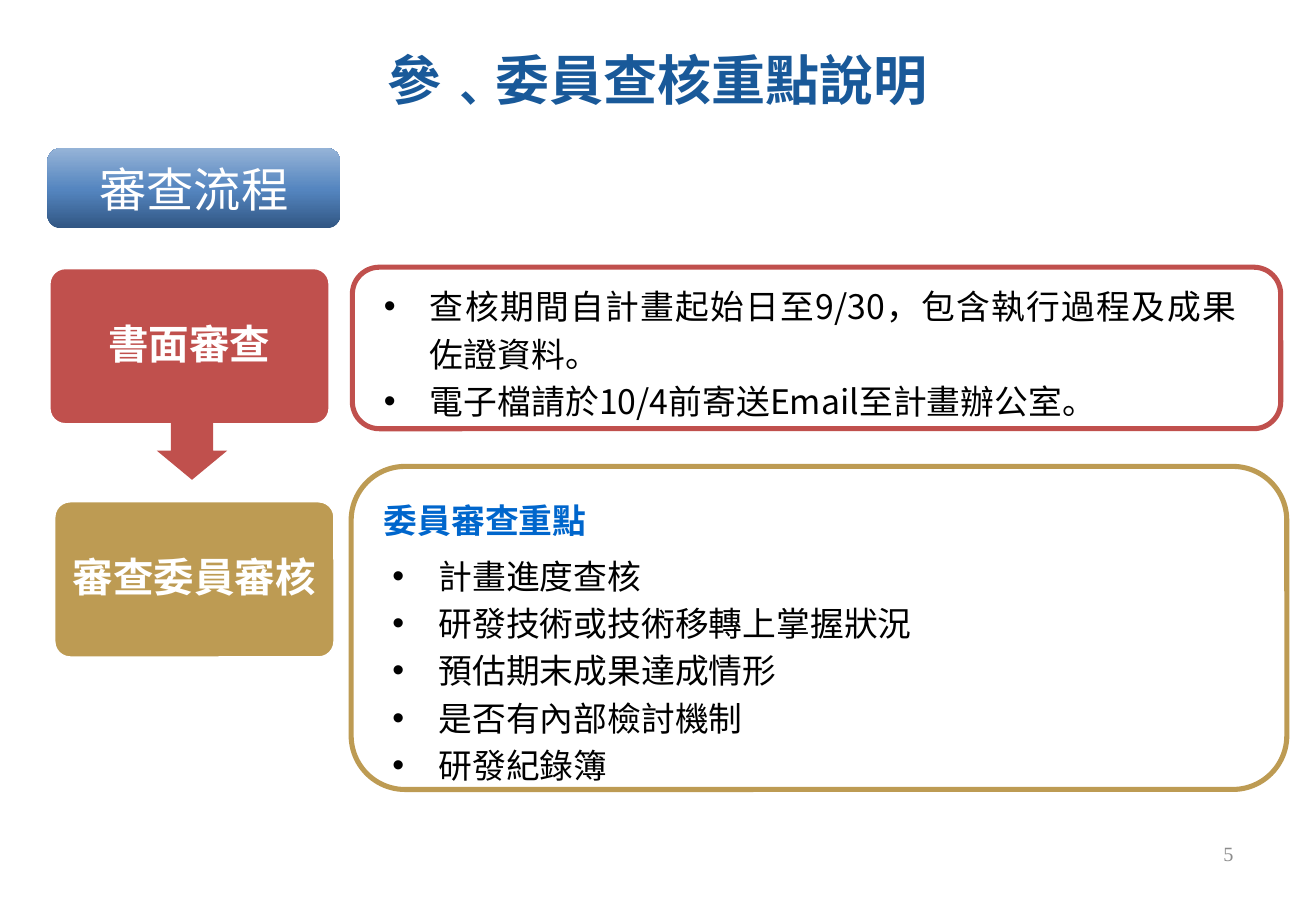
from copy import deepcopy
from pptx import Presentation
from pptx.dml.color import RGBColor
from pptx.enum.shapes import MSO_SHAPE as Shape
from pptx.enum.text import MSO_ANCHOR as Anchor, PP_ALIGN as Align
from pptx.oxml.ns import qn
from pptx.util import Pt

PX = 9144
THEME = {
    "title": "195999", "red": "C0504D", "gold": "BD9B53", "white": "FFFFFF",
    "text": "000000", "heading": "0066CC", "number": "8C8C8C",
    "gradient": [(0, "315683"), (0.48, "5485BF"), (1, "95B3D7")],
    "title_size": 32, "section_size": 28, "step_size": 24,
    "body_size": 20, "number_size": 12,
    "sans": "Arial", "cjk": "Noto Sans CJK SC", "serif": "Times New Roman",
}

deck = Presentation()
deck.slide_width, deck.slide_height = 1083 * PX, 750 * PX
page = deck.slides.add_slide(deck.slide_layouts[6])


def add_box(place, kind=None, fill=None, line=None, width=1, round_by=None):
    place = [length * PX for length in place]
    if kind is None:
        box = page.shapes.add_textbox(*place)
    else:
        box = page.shapes.add_shape(kind, *place)
        box.shadow.inherit = False
        if round_by is not None:
            box.adjustments[0] = round_by
        if fill:
            box.fill.solid()
            box.fill.fore_color.rgb = RGBColor.from_string(THEME[fill])
        else:
            box.fill.background()
        if line:
            box.line.color.rgb = RGBColor.from_string(THEME[line])
            box.line.width = Pt(width)
        else:
            box.line.fill.background()
    box.text_frame.word_wrap = True
    return box


def add_span(para, text, size, color, font, bold=False):
    span = para.add_run()
    span.text = text
    span.font.size = Pt(THEME[size])
    span.font.bold = bold
    span.font.color.rgb = RGBColor.from_string(THEME[color])
    span.font.name = THEME[font]
    east_asian = span.font._element.makeelement(qn("a:ea"), {"typeface": THEME[font]})
    span.font._element.append(east_asian)


title = add_box((49, 41, 984, 48)).text_frame
title.margin_left = title.margin_right = title.margin_top = title.margin_bottom = 0
title.vertical_anchor = Anchor.MIDDLE
para = title.paragraphs[0]
para.alignment = Align.CENTER
for text, font in [("參", "sans"), ("﹑", "cjk"), ("委員查核重點說明", "sans")]:
    add_span(para, text, "title_size", "title", font, True)

number = add_box((781, 683, 244, 40)).text_frame
number.vertical_anchor = Anchor.MIDDLE
para = number.paragraphs[0]
para.alignment = Align.RIGHT
add_span(para, "5", "number_size", "number", "serif")

section = add_box((39, 122, 241, 66), Shape.ROUNDED_RECTANGLE)
section.fill.gradient()
section.fill.gradient_angle = 90
stop_list = section._element.spPr.find(qn("a:gradFill")).find(qn("a:gsLst"))
stop_list.append(deepcopy(stop_list[0]))
for stop, (position, color) in zip(section.fill.gradient_stops, THEME["gradient"]):
    stop.position = position
    stop.color.rgb = RGBColor.from_string(color)
section.text_frame.vertical_anchor = Anchor.MIDDLE
para = section.text_frame.paragraphs[0]
para.alignment = Align.CENTER
add_span(para, "審查流程", "section_size", "white", "sans")

steps = [
    ("書面審查", (41, 221, 230, 128), "red", (290, 220, 764, 133)),
    ("審查委員審核", (45, 413, 230, 128), "gold", (289, 384, 770, 266)),
]
for name, card_place, color, panel_place in steps:
    card = add_box(card_place, Shape.ROUNDED_RECTANGLE, color, "white", round_by=0.1)
    card.text_frame.vertical_anchor = Anchor.MIDDLE
    para = card.text_frame.paragraphs[0]
    para.alignment = Align.CENTER
    para.line_spacing = 0.9
    add_span(para, name, "step_size", "white", "sans", True)
    add_box(panel_place, Shape.ROUNDED_RECTANGLE, line=color, width=3)

arrow = add_box((129, 347, 58, 48), Shape.DOWN_ARROW, "red", round_by=0.6)

heading = add_box((306, 401, 188, 46)).text_frame
heading.word_wrap = False
para = heading.paragraphs[0]
para.line_spacing = Pt(28)
add_span(para, "委員審查重點", "body_size", "heading", "cjk", True)

bullet_lists = [
    ((306, 225, 721, 128), [
        "查核期間自計畫起始日至9/30，包含執行過程及成果佐證資料。",
        "電子檔請於10/4前寄送Email至計畫辦公室。",
    ]),
    ((313, 447, 621, 203), [
        "計畫進度查核",
        "研發技術或技術移轉上掌握狀況",
        "預估期末成果達成情形",
        "是否有內部檢討機制",
        "研發紀錄簿",
    ]),
]
for place, items in bullet_lists:
    frame = add_box(place).text_frame
    for index, item in enumerate(items):
        para = frame.paragraphs[0] if index == 0 else frame.add_paragraph()
        para.alignment = Align.JUSTIFY
        para.line_spacing = Pt(28)
        settings = para._p.get_or_add_pPr()
        settings.set("marL", str(38 * PX))
        settings.set("indent", str(-38 * PX))
        for tag, key, value in [("a:buFont", "typeface", THEME["sans"]), ("a:buChar", "char", "•")]:
            settings.append(settings.makeelement(qn(tag), {key: value}))
        add_span(para, item, "body_size", "text", "cjk")

deck.save("out.pptx")
